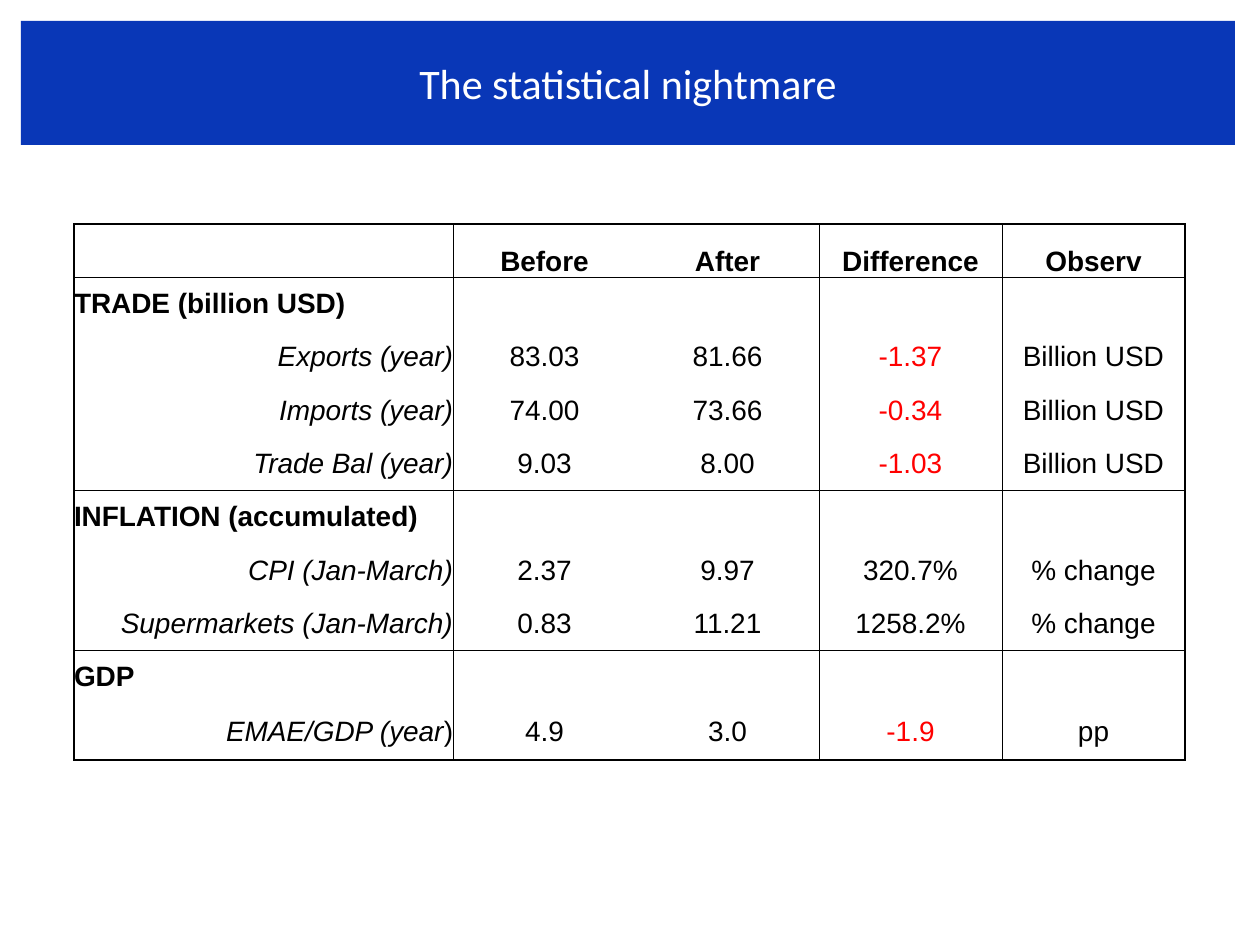
from dataclasses import dataclass

from lxml import etree
from pptx import Presentation, util as u
from pptx.dml.color import RGBColor
from pptx.enum import text as t
from pptx.oxml.ns import qn

BLACK, WHITE, RED, BLUE = "000000", "FFFFFF", "FF0000", "0937B7"
LEFT, MID, RIGHT = t.PP_ALIGN.LEFT, t.PP_ALIGN.CENTER, t.PP_ALIGN.RIGHT


@dataclass
class Row:
    label: str
    vals: tuple = ()
    tail: str = ""  # upright end of an italic label


HEAD = ("Before", "After", "Difference", "Observ")
ROWS = [
    Row("TRADE (billion USD)"),
    Row("Exports (year)", ("83.03", "81.66", "-1.37", "Billion USD")),
    Row("Imports (year)", ("74.00", "73.66", "-0.34", "Billion USD")),
    Row("Trade Bal (year)", ("9.03", "8.00", "-1.03", "Billion USD")),
    Row("INFLATION (accumulated)"),
    Row("CPI (Jan-March)", ("2.37", "9.97", "320.7%", "% change")),
    Row("Supermarkets (Jan-March)", ("0.83", "11.21", "1258.2%", "% change")),
    Row("GDP"),
    Row("EMAE/GDP (year", ("4.9", "3.0", "-1.9", "pp"), ")"),
]

# Ruled grid edges and their widths in points
COLS = {0: 1, 1: 0.5, 3: 0.5, 4: 0.5, 5: 1}
LINES = {0: 1, 1: 0.5, 5: 0.5, 8: 0.5, 10: 1}


def px(n: int) -> int:
    return n * 914400 // 126


def rgb(code: str) -> RGBColor:
    return RGBColor.from_string(code)


def write(frame, words: str, *, size=16, face="Arial", color=BLACK,
          bold=False, ital=False, align=MID) -> None:
    """Add a run to the frame's first paragraph."""
    para = frame.paragraphs[0]
    para.alignment = align
    run = para.add_run()
    run.text = words
    font = run.font
    font.size, font.name = u.Pt(size), face
    font.bold, font.italic = bold, ital
    font.color.rgb = rgb(color)


def rule(cell, row: int, col: int) -> None:
    """Draw the cell's borders where the grid has a line."""
    props = cell._tc.get_or_add_tcPr()
    sides = {"L": COLS.get(col), "R": COLS.get(col + 1),
             "T": LINES.get(row), "B": LINES.get(row + 1)}
    for spot, (side, width) in enumerate(sides.items()):
        line = etree.Element(qn(f"a:ln{side}"))
        if width:
            line.set("w", str(u.Pt(width)))
            fill = etree.SubElement(line, qn("a:solidFill"))
            etree.SubElement(fill, qn("a:srgbClr"), val=BLACK)
        else:
            etree.SubElement(line, qn("a:noFill"))
        props.insert(spot, line)


def fill_row(grid, num: int, row: Row) -> None:
    """Write a section heading, or a label with its values."""
    frame = grid.cell(num, 0).text_frame
    if not row.vals:
        write(frame, row.label, bold=True, align=LEFT)
        return
    write(frame, row.label, ital=True, align=RIGHT)
    if row.tail:
        write(frame, row.tail, align=RIGHT)
    for col, val in enumerate(row.vals, 1):
        color = RED if val.startswith("-") else BLACK
        write(grid.cell(num, col).text_frame, val, color=color)


def main() -> None:
    deck = Presentation()
    deck.slide_width, deck.slide_height = px(1260), px(945)
    slide = deck.slides.add_slide(deck.slide_layouts[5])

    # Title band
    title = slide.shapes.title
    title.left, title.top = px(21), px(21)
    title.width, title.height = px(1214), px(124)
    title.fill.solid()
    title.fill.fore_color.rgb = rgb(BLUE)
    title.text_frame.vertical_anchor = t.MSO_ANCHOR.MIDDLE
    write(title.text_frame, "The statistical nightmare",
          size=24, face="Calibri", color=WHITE)

    # Table grid: nine even rows and a slightly taller last one
    count = len(ROWS) + 1
    grid = slide.shapes.add_table(count, 5, px(74), px(224),
                                  px(1111), px(536)).table
    grid.first_row = grid.horz_banding = False
    for num, col in enumerate(grid.columns):
        col.width = px(183 if num else 379)
    for num, row in enumerate(grid.rows):
        row.height = px(480) // 9 if num < count - 1 else px(56)
        for col, cell in enumerate(row.cells):
            cell.margin_left = cell.margin_right = 0
            cell.margin_top = cell.margin_bottom = 0
            cell.vertical_anchor = (t.MSO_ANCHOR.MIDDLE if num
                                    else t.MSO_ANCHOR.BOTTOM)
            cell.fill.solid()
            cell.fill.fore_color.rgb = rgb(WHITE)
            rule(cell, num, col)

    # Table text
    for col, name in enumerate(HEAD, 1):
        write(grid.cell(0, col).text_frame, name, bold=True)
    for num, row in enumerate(ROWS, 1):
        fill_row(grid, num, row)

    deck.save("out.pptx")


if __name__ == "__main__":
    main()
